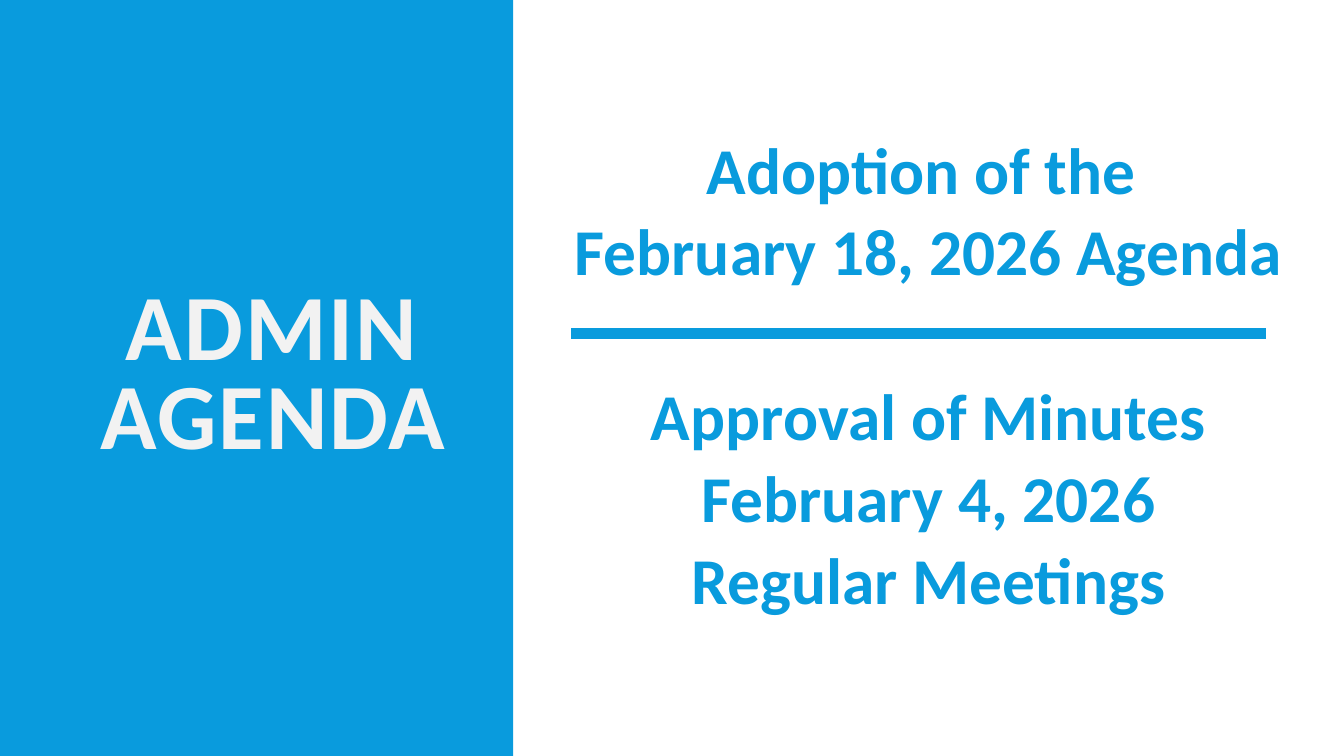
import pptx
import pptx.util
import pptx.dml.color
import pptx.enum.text
import pptx.enum.shapes
import pptx.oxml
from dataclasses import dataclass

Pt = pptx.util.Pt
RGB = pptx.dml.color.RGBColor.from_string
TEXT = pptx.enum.text


@dataclass(frozen=True)
class Theme:
    font: str = "Calibri"
    blue: str = "099BDD"
    white: str = "FFFFFF"
    pale: str = "F2F2F2"
    title: float = 50
    body: float = 35
    rule: float = 6


THEME = Theme()


def place(shape, box):
    shape.left, shape.top, shape.width, shape.height = map(Pt, box)


def setup(frame):
    form = {"word_wrap": True, "auto_size": TEXT.MSO_AUTO_SIZE.NONE,
            "vertical_anchor": TEXT.MSO_ANCHOR.MIDDLE}
    for key, value in form.items():
        setattr(frame, key, value)


def style(para, size, color, **form):
    form = {"alignment": TEXT.PP_ALIGN.CENTER, "space_before": Pt(0), **form}
    for key, value in form.items():
        setattr(para, key, value)
    for run in para.runs:
        font = {"name": THEME.font, "size": Pt(size), "bold": True}
        for key, value in font.items():
            setattr(run.font, key, value)
        run.font.color.rgb = RGB(color)


def banner(slide, box, text):
    """Blue side panel with the title."""
    x, y, w, h = box
    panel = slide.shapes.add_shape(pptx.enum.shapes.MSO_SHAPE.RECTANGLE,
                                   *map(Pt, box))
    panel.shadow.inherit = False
    panel.fill.solid()
    panel.fill.fore_color.rgb = RGB(THEME.blue)
    panel.line.fill.background()
    # Send the panel behind the placeholders
    slide.shapes._spTree.insert(2, panel._element)

    title = slide.shapes.title
    place(title, (x + 36.7, y + 49.5, 219, h - 99))
    setup(title.text_frame)
    title.text_frame.text = text
    para = title.text_frame.paragraphs[0]
    style(para, THEME.title, THEME.pale, line_spacing=0.8)
    for run in para.runs:
        run.font._element.set("spc", "110")


def agenda(slide, box, groups):
    """Centred items in two groups, parted by a rule."""
    x, y, w, h = box
    body = slide.placeholders[1]
    place(body, box)
    body.fill.solid()
    body.fill.fore_color.rgb = RGB(THEME.white)
    frame = body.text_frame
    setup(frame)
    frame.text = "\n".join(line for group in groups for line in group)
    first = len(groups[0])
    for i, para in enumerate(frame.paragraphs):
        gap = 44.4 if i == first else 0
        style(para, THEME.body, THEME.blue, line_spacing=0.9,
              space_before=Pt(gap), space_after=Pt(6))

    # Rule between the groups
    level = Pt(y + 178.7)
    rule = slide.shapes.add_connector(
        pptx.enum.shapes.MSO_CONNECTOR.STRAIGHT,
        Pt(x + 31), level, Pt(x + w - 42), level)
    rule.line.color.rgb = RGB(THEME.blue)
    rule.line.width = Pt(THEME.rule)
    rule._element.spPr.append(pptx.oxml.parse_xml(
        '<a:effectLst xmlns:a='
        '"http://schemas.openxmlformats.org/drawingml/2006/main"/>'))


def main():
    deck = pptx.Presentation()
    wide, high, split = 720, 405, 275
    deck.slide_width, deck.slide_height = Pt(wide), Pt(high)
    slide = deck.slides.add_slide(deck.slide_layouts[0])
    banner(slide, (0, 0, split, high), "ADMIN AGENDA")
    agenda(slide, (split, 0, wide - split, high), [
        ["Adoption of the ", "February 18, 2026 Agenda"],
        ["Approval of Minutes", "February 4, 2026", "Regular Meetings"],
    ])
    deck.save("out.pptx")


if __name__ == "__main__":
    main()
